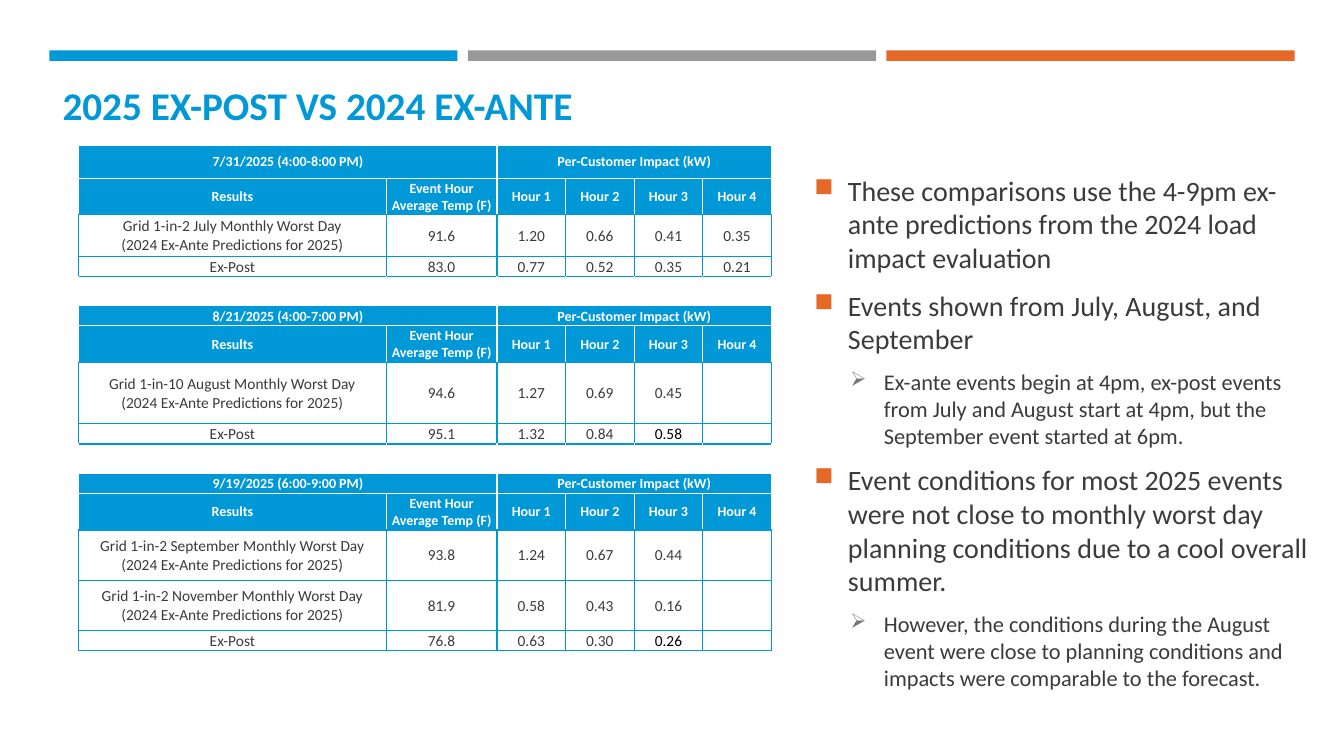
from pptx import Presentation
from pptx.dml.color import RGBColor
from pptx.enum import shapes, text
from pptx.oxml import ns
from pptx.util import Pt
from lxml import etree

BLUE = RGBColor(0x00, 0x98, 0xD7)
GREY = RGBColor(0x99, 0x99, 0x99)
ORANGE = RGBColor(0xE6, 0x68, 0x27)
DARK = RGBColor(0x3B, 0x3B, 0x3B)
MID = RGBColor(0x75, 0x75, 0x75)
BLACK = RGBColor(0, 0, 0)
WHITE = RGBColor(0xFF, 0xFF, 0xFF)
FACE = "Calibri"

COLS = [219.6, 79.2] + [49] * 4
HEADS = ["Results", "Event Hour Average Temp (F)"] + [f"Hour {n}" for n in range(1, 5)]
NOTE = "\n(2024 Ex-Ante Predictions for 2025)"
EVENTS = [
    ("7/31/2025 (4:00-8:00 PM)", 23.8, 29.6, [
        ["Grid 1-in-2 July Monthly Worst Day" + NOTE, "91.6", "1.20", "0.66", "0.41", "0.35"],
        ["Ex-Post", "83.0", "0.77", "0.52", "0.35", "0.21"]]),
    ("8/21/2025 (4:00-7:00 PM)", 14.4, 44, [
        ["Grid 1-in-10 August Monthly Worst Day" + NOTE, "94.6", "1.27", "0.69", "0.45", ""],
        ["Ex-Post", "95.1", "1.32", "0.84", "0.58", ""]]),
    ("9/19/2025 (6:00-9:00 PM)", 14.4, 36, [
        ["Grid 1-in-2 September Monthly Worst Day" + NOTE, "93.8", "1.24", "0.67", "0.44", ""],
        ["Grid 1-in-2 November Monthly Worst Day" + NOTE, "81.9", "0.58", "0.43", "0.16", ""],
        ["Ex-Post", "76.8", "0.63", "0.30", "0.26", ""]]),
]
LATE = ("0.58", "0.26")
POINTS = [
    (0, "These comparisons use the 4-9pm ex-ante predictions from the 2024 load impact evaluation"),
    (0, "Events shown from July, August, and September"),
    (1, "Ex-ante events begin at 4pm, ex-post events from July and August start at 4pm, "
        "but the September event started at 6pm."),
    (0, "Event conditions for most 2025 events were not close to monthly worst day "
        "planning conditions due to a cool overall summer."),
    (1, "However, the conditions during the August event were close to planning conditions "
        "and impacts were comparable to the forecast."),
]


def add_el(parent, tag, **attrs):
    el = etree.SubElement(parent, ns.qn(tag))
    for key, val in attrs.items():
        el.set(key, str(val))
    return el


def set_font(para, size, color, bold=False):
    font = para.font
    font.name, font.size, font.bold = FACE, Pt(size), bold
    font.color.rgb = color


def add_bars(slide, left, top, width, height, step):
    for i, color in enumerate((BLUE, GREY, ORANGE)):
        bar = slide.shapes.add_shape(shapes.MSO_SHAPE.RECTANGLE, Pt(left + i * step),
                                     Pt(top), Pt(width), Pt(height))
        bar.shadow.inherit = False
        bar.fill.solid()
        bar.fill.fore_color.rgb = color
        bar.line.fill.background()


def add_title(slide, left, top, width, height):
    title = slide.shapes.title
    title.left, title.top, title.width, title.height = map(Pt, (left, top, width, height))
    frame = title.text_frame
    frame.text = "2025 EX-POST VS 2024 EX-ANTE"
    frame.vertical_anchor = text.MSO_ANCHOR.BOTTOM
    para = frame.paragraphs[0]
    para.alignment = text.PP_ALIGN.LEFT
    set_font(para, 28, BLUE, True)


def set_edges(cell, left, right, top, low):
    props = cell._tc.get_or_add_tcPr()
    for i, (side, color) in enumerate(zip("LRTB", (left, right, top, low))):
        line = etree.Element(ns.qn(f"a:ln{side}"), w=str(Pt(1)))
        add_el(add_el(line, "a:solidFill"), "a:srgbClr", val=color)
        props.insert(i, line)


def fill_cell(cell, words, size, color, fill, edges, bold=False):
    cell.text = words
    cell.vertical_anchor = text.MSO_ANCHOR.MIDDLE
    cell.margin_left = cell.margin_right = cell.margin_top = Pt(0.7)
    cell.margin_bottom = 0
    for para in cell.text_frame.paragraphs:
        para.alignment = text.PP_ALIGN.CENTER
        set_font(para, size, color, bold)
    if fill is None:
        cell.fill.background()
    else:
        cell.fill.solid()
        cell.fill.fore_color.rgb = fill
    set_edges(cell, *edges)


def list_rows():
    rows = []
    for n, (date, top, tall, body) in enumerate(EVENTS):
        if n:
            rows.append(("gap", 21, [""] * 6))
        rows.append(("date", top, [date, "", "Per-Customer Impact (kW)", "", "", ""]))
        rows.append(("head", 26, HEADS))
        rows += [("body", tall, cells) for cells in body[:-1]]
        rows.append(("body", 14.4, body[-1]))
    return rows


def add_grid(slide, left, top):
    rows = list_rows()
    frame = slide.shapes.add_table(len(rows), len(COLS), Pt(left), Pt(top), Pt(sum(COLS)),
                                   Pt(sum(row[1] for row in rows)))
    grid = frame.table
    grid.first_row = grid.horz_banding = False
    for col, width in zip(grid.columns, COLS):
        col.width = Pt(width)
    looks = {
        "gap": (10, WHITE, WHITE, (WHITE, WHITE, BLUE, WHITE)),
        "date": (10, WHITE, BLUE, (WHITE,) * 4, True),
        "head": (10, WHITE, BLUE, (WHITE, WHITE, WHITE, BLUE), True),
        "body": (11, DARK, None, (BLUE,) * 4),
    }
    for r, (kind, height, cells) in enumerate(rows):
        grid.rows[r].height = Pt(height)
        for c, words in enumerate(cells):
            size, color, *rest = looks[kind]
            if c == 4 and words in LATE:
                color = BLACK
            fill_cell(grid.cell(r, c), words, size, color, *rest)
        if kind == "date":
            grid.cell(r, 0).merge(grid.cell(r, 1))
            grid.cell(r, 2).merge(grid.cell(r, 5))


def add_points(slide, left, top, width, height):
    frame = slide.shapes.add_textbox(Pt(left), Pt(top), Pt(width), Pt(height)).text_frame
    frame.word_wrap = True
    levels = [(24, 20, "■", ORANGE), (49.7, 16, "➢", MID)]
    for i, (level, words) in enumerate(POINTS):
        indent, size, mark, tint = levels[level]
        para = frame.add_paragraph() if i else frame.paragraphs[0]
        para.text = words
        para.level = level
        if i:
            para.space_before = Pt(size * 0.2)
        para.space_after = Pt(6)
        props = para._p.get_or_add_pPr()
        props.set("marL", str(Pt(indent)))
        props.set("indent", str(Pt(-24)))
        add_el(add_el(props, "a:buClr"), "a:srgbClr", val=tint)
        add_el(props, "a:buSzPct", val=92000)
        add_el(props, "a:buChar", char=mark)
        set_font(para, size, DARK)


def main():
    deck = Presentation()
    deck.slide_width, deck.slide_height = Pt(960), Pt(540)
    slide = deck.slides.add_slide(deck.slide_layouts[5])
    add_bars(slide, 35.2, 36, 291.6, 7.5, 299)
    add_title(slide, 37.5, 44, 868, 51)
    add_grid(slide, 56.2, 103.6)
    add_points(slide, 574.6, 120.2, 374.4, 362.2)
    deck.save("out.pptx")


if __name__ == "__main__":
    main()
